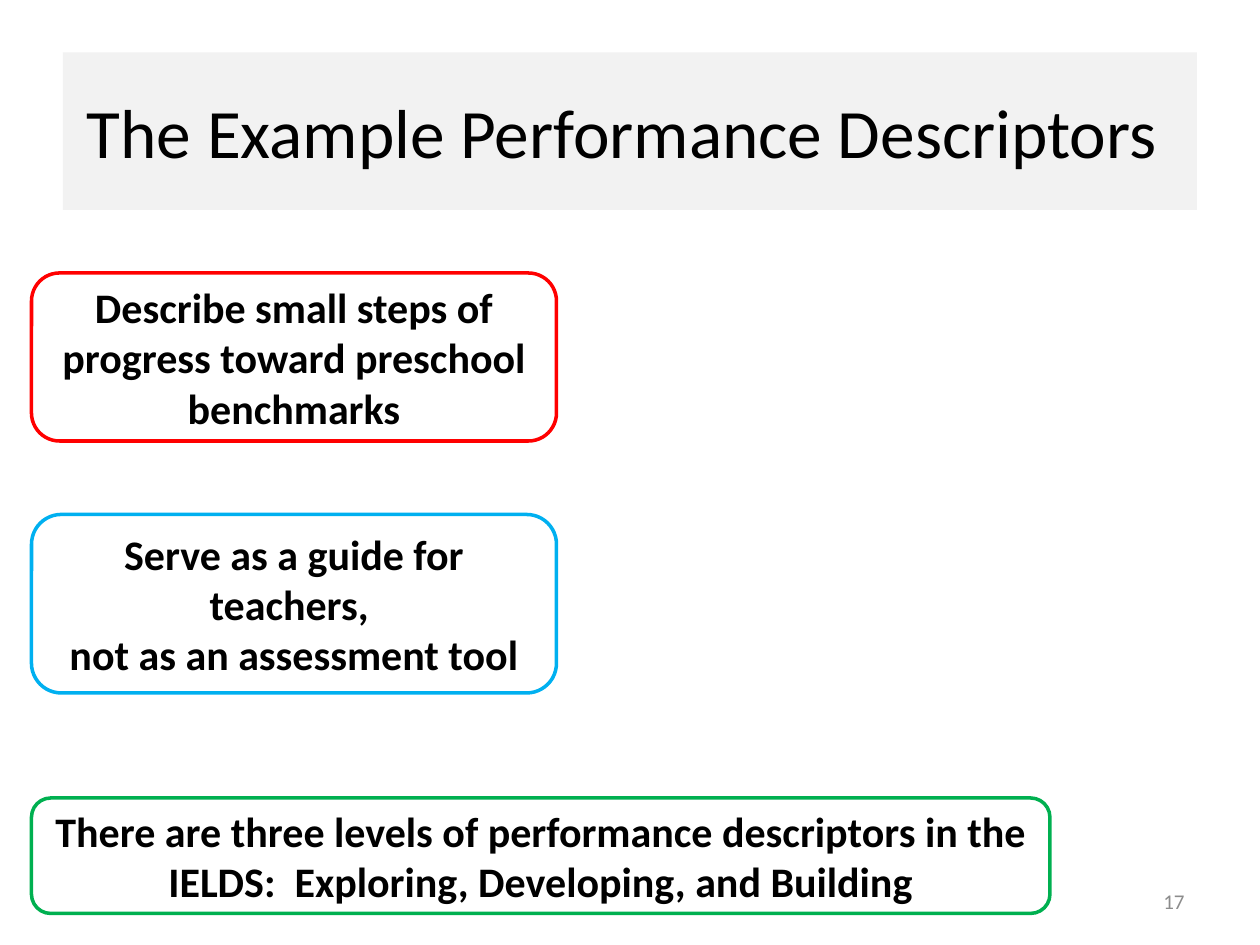
from pptx import Presentation
from pptx.util import Pt
from pptx.dml.color import RGBColor as RGB
from pptx.enum.shapes import MSO_SHAPE as Kind
from pptx.enum.text import PP_ALIGN as Align, MSO_ANCHOR as Anchor

COLORS = {
    "ink": "000000", "band": "F2F2F2", "gray": "8C8C8C",
    "red": "FF0000", "blue": "00B0F0", "green": "00B050",
}


def color(name):
    return RGB.from_string(COLORS[name])


def write(shape, text, size=24, bold=False, ink="ink", align=Align.CENTER):
    frame = shape.text_frame
    frame.word_wrap = True
    frame.vertical_anchor = Anchor.MIDDLE
    frame.text = text
    for para in frame.paragraphs:
        para.alignment = align
        font = para.font
        font.name, font.size, font.bold = "Calibri", Pt(size), bold
        font.color.rgb = color(ink)


def add_title(slide, box, text):
    band = slide.shapes.add_shape(Kind.RECTANGLE, *map(Pt, box))
    band.shadow.inherit = False
    band.fill.solid()
    band.fill.fore_color.rgb = color("band")
    band.line.fill.background()
    write(band, text, size=39.6)


def add_card(slide, box, text, edge):
    card = slide.shapes.add_shape(Kind.ROUNDED_RECTANGLE, *map(Pt, box))
    card.shadow.inherit = False
    card.fill.background()
    card.line.color.rgb = color(edge)
    card.line.width = Pt(2)
    write(card, text, bold=True)


def add_number(slide, box, text):
    label = slide.shapes.add_textbox(*map(Pt, box))
    write(label, text, size=12, ink="gray", align=Align.RIGHT)


def main():
    deck = Presentation()
    deck.slide_width, deck.slide_height = Pt(720), Pt(540)
    slide = deck.slides.add_slide(deck.slide_layouts[6])

    # Page number and title band
    add_number(slide, (516, 500.5, 168, 28.75), "17")
    add_title(slide, (36, 30, 648, 90), "The Example Performance Descriptors ")

    # Outlined cards on a shared left edge: top, width, height, edge, text
    left = 18
    cards = [
        (156, 300, 96, "red",
         "Describe small steps of progress toward preschool benchmarks"),
        (294, 300, 102, "blue",
         "Serve as a guide for teachers, \nnot as an assessment tool"),
        (456, 582, 66, "green",
         "There are three levels of performance descriptors in the "
         "IELDS:  Exploring, Developing, and Building"),
    ]
    for top, width, height, edge, text in cards:
        add_card(slide, (left, top, width, height), text, edge)

    deck.save("out.pptx")


if __name__ == "__main__":
    main()
